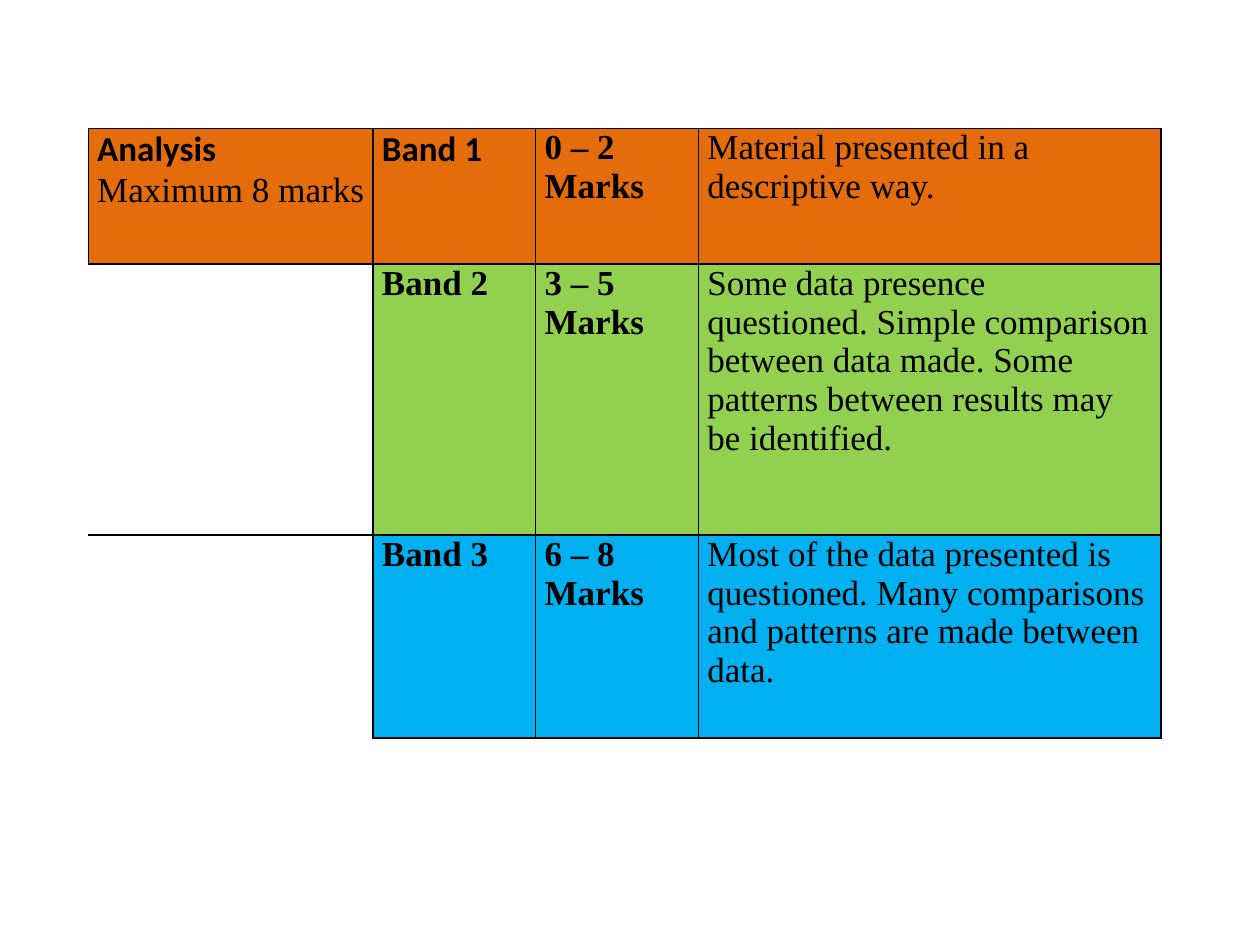
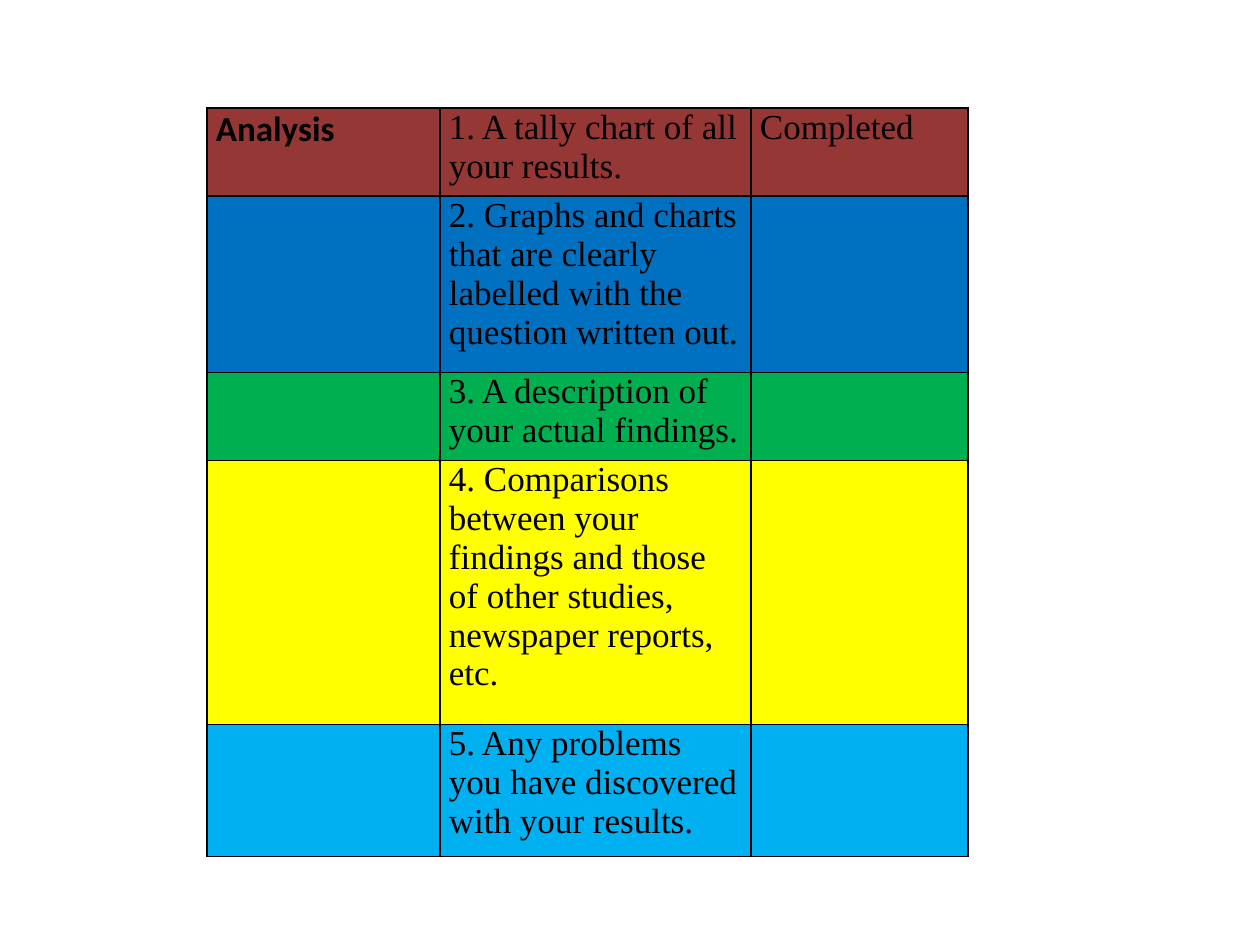
from lxml import etree
from pptx import Presentation
from pptx.dml.color import RGBColor
from pptx.oxml import ns
from pptx.util import Cm, Pt

COLOURS = {"ink": "000000", "orange": "E46C0A", "lime": "92D050", "sky": "00B0F0",
           "maroon": "953735", "blue": "0070C0", "green": "00B050", "yellow": "FFFF00"}

# Paragraph styles: font name, bold
STYLES = {"head": ("Calibri", True), "strong": ("Times New Roman", True),
          "body": ("Times New Roman", False)}
TEXT_SIZE = Pt(20)
SIDE_MARGIN = Cm(0.18)
BORDER = Pt(1)
PLAIN_STYLE = "{2D5ABB26-0587-4C30-8999-92F81FD0307C}"

# Each row: colour, height in lines, cells.
# A cell is a list of (style, text); None leaves the cell open, without a fill.
MARK_BANDS = {
    "left": 1.78, "top": 2.59, "height": 12.29,
    "widths": [5.74, 3.28, 3.28, 9.32],
    "rows": [
        ("orange", 2, [
            [("head", "Analysis"), ("body", "Maximum 8 marks")],
            [("head", "Band 1")],
            [("strong", "0 – 2"), ("strong", "Marks")],
            [("body", "Material presented in a descriptive way.")]]),
        ("lime", 4, [
            None,
            [("strong", "Band 2")],
            [("strong", "3 – 5"), ("strong", "Marks")],
            [("body", "Some data presence questioned. Simple comparison between data "
                      "made. Some patterns between results may be identified.")]]),
        ("sky", 3, [
            None,
            [("strong", "Band 3")],
            [("strong", "6 – 8"), ("strong", "Marks")],
            [("body", "Most of the data presented is questioned. Many comparisons "
                      "and patterns are made between data.")]]),
    ],
}

CHECKLIST = {
    "left": 4.17, "top": 2.18, "height": 15.09,
    "widths": [4.7, 6.27, 4.37],
    "rows": [
        ("maroon", 2, [[("head", "Analysis")],
                       [("body", "1. A tally chart of all your results.")],
                       [("body", "Completed")]]),
        ("blue", 4, [[], [("body", "2. Graphs and charts that are clearly labelled "
                                   "with the question written out.")], []]),
        ("green", 2, [[], [("body", "3. A description of your actual findings.")], []]),
        ("yellow", 6, [[], [("body", "4. Comparisons between your findings and those "
                                     "of other studies, newspaper reports, etc.")], []]),
        ("sky", 3, [[], [("body", "5. Any problems you have discovered with your "
                                  "results.")], []]),
    ],
}


def colour(name):
    return RGBColor.from_string(COLOURS[name])


def draw_borders(cell, sides):
    """Rule the given sides; call before the fill, which must follow the lines."""
    tc_pr = cell._tc.get_or_add_tcPr()
    for side in "LRTB":
        if side in sides:
            ln = etree.SubElement(tc_pr, ns.qn(f"a:ln{side}"), w=str(int(BORDER)))
            fill = etree.SubElement(ln, ns.qn("a:solidFill"))
            etree.SubElement(fill, ns.qn("a:srgbClr"), val=COLOURS["ink"])


def write_text(cell, paragraphs):
    tf = cell.text_frame
    for i, (style, words) in enumerate(paragraphs):
        p = tf.add_paragraph() if i else tf.paragraphs[0]
        p.text = words
        p.font.name, p.font.bold = STYLES[style]
        p.font.size = TEXT_SIZE
        p.font.color.rgb = colour("ink")


def add_grid(s, grid):
    rows, widths = grid["rows"], grid["widths"]
    line_height = grid["height"] / sum(lines for _, lines, _ in rows)
    table = s.shapes.add_table(len(rows), len(widths), Cm(grid["left"]), Cm(grid["top"]),
                               Cm(sum(widths)), Cm(grid["height"])).table
    table.first_row = table.horz_banding = False
    table._tbl.tblPr.find(ns.qn("a:tableStyleId")).text = PLAIN_STYLE
    for column, width in zip(table.columns, widths):
        column.width = Cm(width)

    for r, (fill, lines, cells) in enumerate(rows):
        table.rows[r].height = Cm(lines * line_height)
        for c, paragraphs in enumerate(cells):
            cell = table.cell(r, c)
            cell.margin_left = cell.margin_right = SIDE_MARGIN
            cell.margin_top = cell.margin_bottom = 0
            if paragraphs is None:
                # An open cell is ruled only where it meets a filled one
                above_filled = rows[r - 1][2][c] is not None
                draw_borders(cell, "RT" if above_filled else "R")
                cell.fill.background()
            else:
                draw_borders(cell, "LRTB")
                cell.fill.solid()
                cell.fill.fore_color.rgb = colour(fill)
                write_text(cell, paragraphs)


def main():
    prs = Presentation()
    prs.slide_width, prs.slide_height = Cm(25.4), Cm(19.05)
    for grid in (MARK_BANDS, CHECKLIST):
        add_grid(prs.slides.add_slide(prs.slide_layouts[6]), grid)
    prs.save("out.pptx")


if __name__ == "__main__":
    main()
